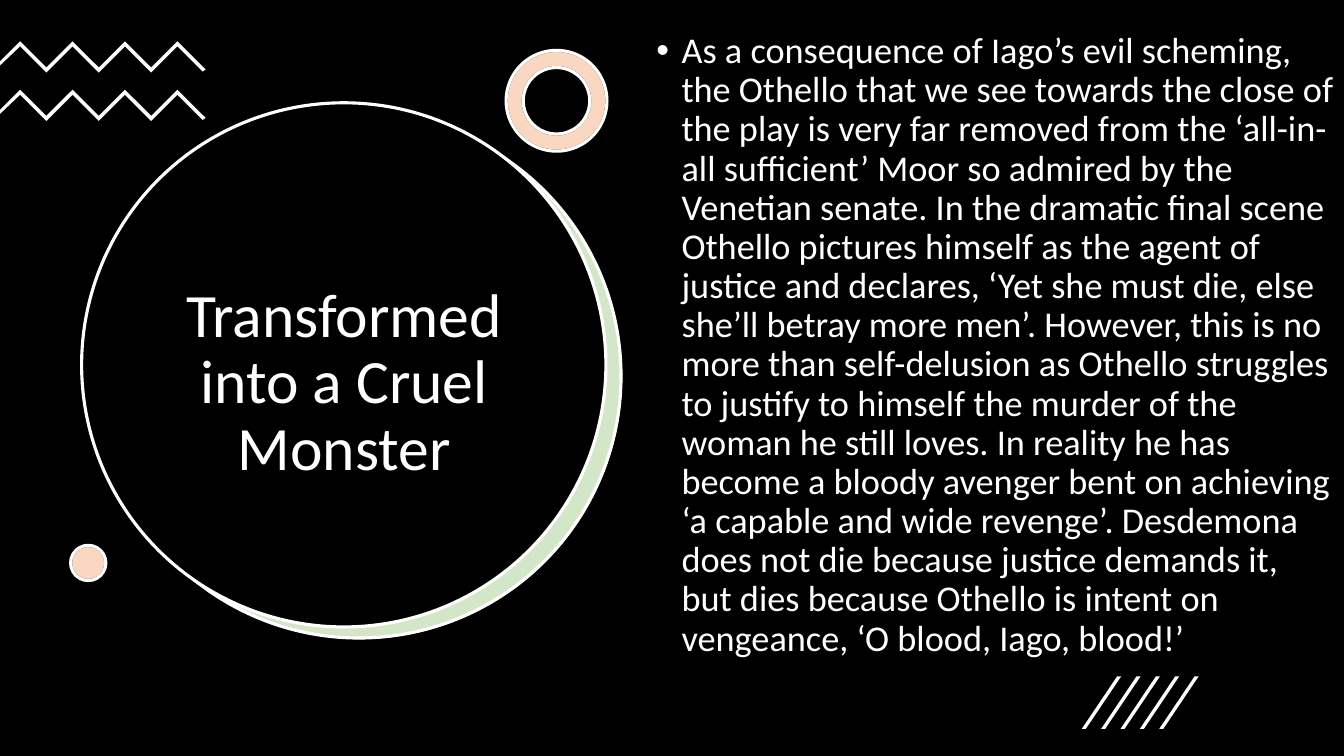
from dataclasses import dataclass
from typing import Optional

from lxml import etree
from pptx import Presentation
from pptx.dml.color import RGBColor
from pptx.enum.shapes import MSO_SHAPE
from pptx.enum.text import MSO_ANCHOR, MSO_AUTO_SIZE, PP_ALIGN
from pptx.oxml.ns import qn
from pptx.shapes.autoshape import Shape
from pptx.slide import Slide
from pptx.util import Emu, Inches, Pt

SLIDE_WIDTH = Inches(13.33)
SLIDE_HEIGHT = Inches(7.5)
COLUMNS = 133.3
ROWS = 75

BLACK = RGBColor(0x00, 0x00, 0x00)
WHITE = RGBColor(0xFF, 0xFF, 0xFF)
GREEN = RGBColor(0x70, 0xAD, 0x47)
ORANGE = RGBColor(0xED, 0x7D, 0x31)

RECTANGLE = MSO_SHAPE.RECTANGLE
OVAL = MSO_SHAPE.OVAL
DONUT = MSO_SHAPE.DONUT
MIDDLE = MSO_ANCHOR.MIDDLE
TOP = MSO_ANCHOR.TOP
CENTER = PP_ALIGN.CENTER
LEFT = PP_ALIGN.LEFT
NO_AUTOFIT = MSO_AUTO_SIZE.NONE

FONT = "Calibri"
OUTLINE = Pt(2.25)
TINT = 30
RING_THICKNESS = 0.17
ZIGZAG_STEP = 2.6
ZIGZAG_TURNS = 7
STROKE_DROP = 0.5
SLASH_COUNT = 5
SLASH_STEP = 1.92

TITLE = "Transformed into a Cruel Monster"
ARGUMENT = (
    "As a consequence of Iago’s evil scheming, the Othello that we see towards "
    "the close of the play is very far removed from the ‘all-in-all sufficient’ "
    "Moor so admired by the Venetian senate. In the dramatic final scene Othello "
    "pictures himself as the agent of justice and declares, ‘Yet she must die, "
    "else she’ll betray more men’. However, this is no more than self-delusion as "
    "Othello struggles to justify to himself the murder of the woman he still "
    "loves. In reality he has become a bloody avenger bent on achieving ‘a capable "
    "and wide revenge’. Desdemona does not die because justice demands it, but "
    "dies because Othello is intent on vengeance, ‘O blood, Iago, blood!’"
)


@dataclass(frozen=True)
class Area:
    column: float
    row: float
    columns: float
    rows: float


@dataclass(frozen=True)
class Figure:
    preset: MSO_SHAPE
    area: Area
    fill: RGBColor
    line: Optional[RGBColor] = None
    opacity: int = 100


@dataclass(frozen=True)
class Wording:
    text: str
    area: Area
    size: float
    align: PP_ALIGN
    anchor: MSO_ANCHOR


RING = Area(50.2, 5, 10, 10)
DOT = Area(7, 54.1, 3.5, 3.5)

BACKDROP = [
    Figure(RECTANGLE, Area(0, 0, COLUMNS, ROWS), BLACK),
    Figure(OVAL, Area(9.7, 11.4, 52, 52), WHITE),
    Figure(OVAL, Area(9.6, 11.3, 52, 52), GREEN, WHITE, TINT),
    Figure(OVAL, Area(8.1, 10.2, 52, 52), BLACK, WHITE),
]
ACCENTS = [
    figure
    for preset, area in ((DONUT, RING), (OVAL, DOT))
    for figure in (
        Figure(preset, area, WHITE, BLACK),
        Figure(preset, area, ORANGE, WHITE, TINT),
    )
]
HEADING = Wording(TITLE, Area(12.1, 20.5, 44.1, 35.2), 44, CENTER, MIDDLE)
BODY = Wording(ARGUMENT, Area(64.1, 2.7, 69.3, 67.4), 25.9, LEFT, TOP)


def across(columns: float) -> Emu:
    return Emu(round(SLIDE_WIDTH * columns / COLUMNS))


def down(rows: float) -> Emu:
    return Emu(round(SLIDE_HEIGHT * rows / ROWS))


def place(shape: Shape, area: Area) -> None:
    shape.left, shape.top = across(area.column), down(area.row)
    shape.width, shape.height = across(area.columns), down(area.rows)


def paint(shape: Shape, fill: RGBColor, line: Optional[RGBColor], opacity: int) -> None:
    shape.shadow.inherit = False
    shape.fill.solid()
    shape.fill.fore_color.rgb = fill
    if opacity < 100:
        color = shape.element.spPr.find(qn("a:solidFill")).find(qn("a:srgbClr"))
        etree.SubElement(color, qn("a:alpha")).set("val", str(opacity * 1000))
    if line is None:
        shape.line.fill.background()
    else:
        shape.line.color.rgb = line
        shape.line.width = OUTLINE


def draw_figure(slide: Slide, figure: Figure) -> None:
    area = figure.area
    shape = slide.shapes.add_shape(
        figure.preset, across(area.column), down(area.row),
        across(area.columns), down(area.rows),
    )
    if figure.preset == DONUT:
        shape.adjustments[0] = RING_THICKNESS
    paint(shape, figure.fill, figure.line, figure.opacity)


def draw_outline(slide: Slide, points: list[tuple[float, float]]) -> None:
    corners = [(across(column), down(row)) for column, row in points]
    builder = slide.shapes.build_freeform(*corners[0])
    builder.add_line_segments(corners[1:], close=True)
    paint(builder.convert_to_shape(), WHITE, None, 100)


def draw_zigzag(slide: Slide, row: float) -> None:
    upper = [
        (2 + ZIGZAG_STEP * turn, row + ZIGZAG_STEP * (turn % 2))
        for turn in range(ZIGZAG_TURNS)
    ]
    lower = [(column, level + STROKE_DROP) for column, level in reversed(upper)]
    right_end = [(20.4, row + 2.8), (20.1, row + 3)]
    left_end = [(0, row + 2.4), (0, row + 2)]
    draw_outline(slide, upper + right_end + lower + left_end)


def draw_slash(slide: Slide, column: float) -> None:
    draw_outline(slide, [
        (column + 0.4, 72.3), (column, 72.3),
        (column + 3.5, 67.1), (column + 3.9, 67.1),
    ])


def write(slide: Slide, placeholder: Shape, wording: Wording) -> None:
    slide.shapes.element.append(placeholder.element)
    place(placeholder, wording.area)
    frame = placeholder.text_frame
    frame.word_wrap = True
    frame.auto_size = NO_AUTOFIT
    frame.vertical_anchor = wording.anchor
    paragraph = frame.paragraphs[0]
    paragraph.alignment = wording.align
    paragraph.line_spacing = 0.9
    run = paragraph.add_run()
    run.text = wording.text
    run.font.name = FONT
    run.font.size = Pt(wording.size)
    run.font.color.rgb = WHITE


def add_bullet(placeholder: Shape) -> None:
    paragraph = placeholder.text_frame.paragraphs[0]
    paragraph.space_before = Pt(10)
    properties = paragraph._p.get_or_add_pPr()
    properties.set("marL", str(Inches(0.25)))
    properties.set("indent", str(-Inches(0.25)))
    etree.SubElement(properties, qn("a:buFont")).set("typeface", "Arial")
    etree.SubElement(properties, qn("a:buChar")).set("char", "•")


def main() -> None:
    presentation = Presentation()
    presentation.slide_width = SLIDE_WIDTH
    presentation.slide_height = SLIDE_HEIGHT
    slide = presentation.slides.add_slide(presentation.slide_layouts[1])
    heading, body = slide.placeholders
    for figure in BACKDROP:
        draw_figure(slide, figure)
    write(slide, heading, HEADING)
    for row in (4.1, 8.9):
        draw_zigzag(slide, row)
    for figure in ACCENTS:
        draw_figure(slide, figure)
    write(slide, body, BODY)
    add_bullet(body)
    for index in range(SLASH_COUNT):
        draw_slash(slide, 107.3 + SLASH_STEP * index)
    presentation.save("out.pptx")


if __name__ == "__main__":
    main()
